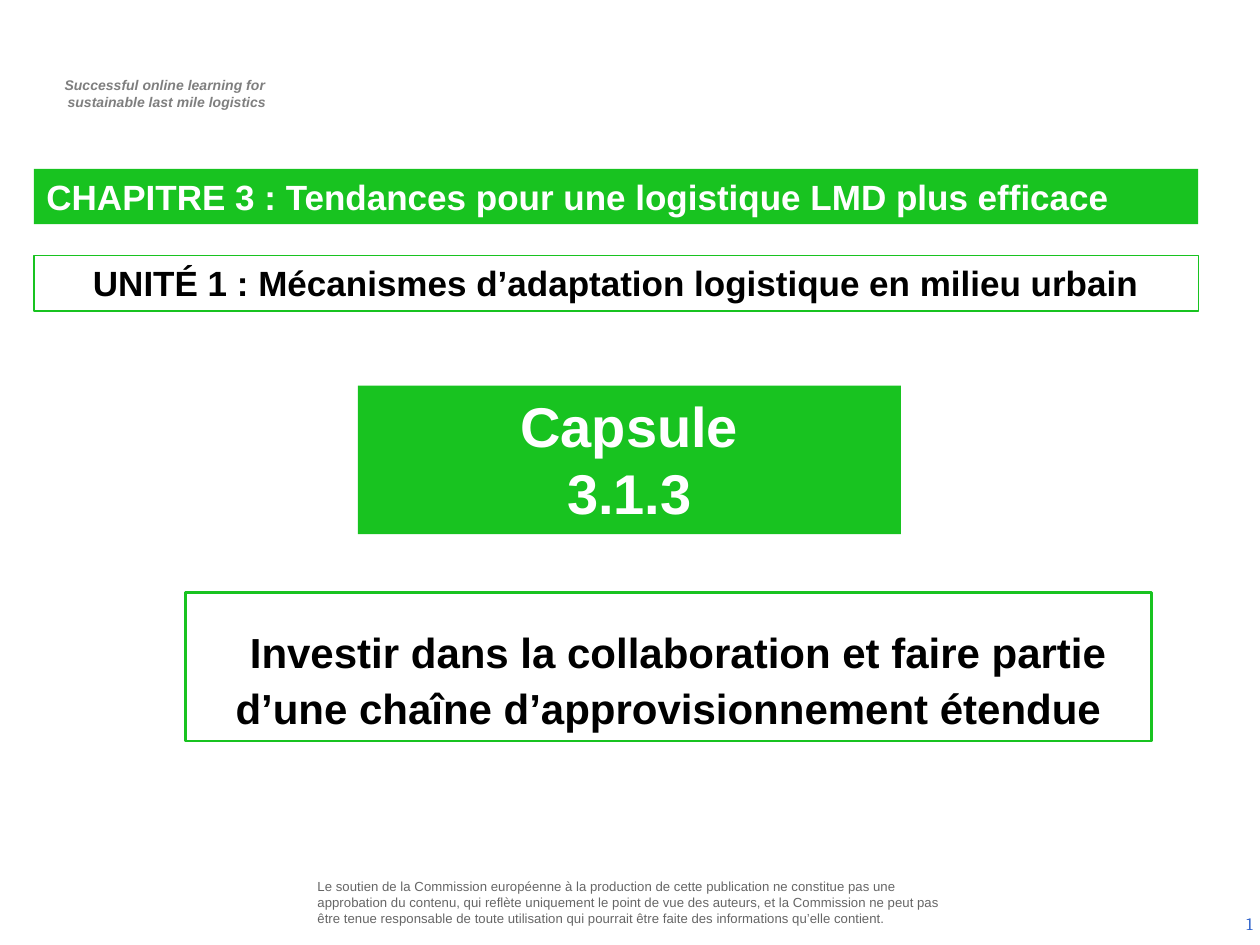
import pptx
import pptx.util
import pptx.dml.color
import pptx.enum.shapes
import pptx.enum.text
import pptx.oxml
import pptx.oxml.ns

Inches = pptx.util.Inches
RGBColor = pptx.dml.color.RGBColor
ALIGN = pptx.enum.text.PP_ALIGN
ANCHOR = pptx.enum.text.MSO_ANCHOR

GREEN = RGBColor(0x18, 0xC3, 0x20)
WHITE = RGBColor(0xFF, 0xFF, 0xFF)
BLACK = RGBColor(0, 0, 0)
HEADER_GRAY = RGBColor(0x7F, 0x7F, 0x7F)
NOTICE_GRAY = RGBColor(0x66, 0x66, 0x66)
NUMBER_BLUE = RGBColor(0x33, 0x66, 0xCC)


def write(shape, lines, size, color, align, bold=False, anchor=ANCHOR.TOP,
          inset=(0.1, 0.05)):
    """Fill a shape with paragraphs that share one format."""
    frame = shape.text_frame
    frame.word_wrap = True
    frame.auto_size = pptx.enum.text.MSO_AUTO_SIZE.NONE
    frame.vertical_anchor = anchor
    frame.margin_left = frame.margin_right = Inches(inset[0])
    frame.margin_top = frame.margin_bottom = Inches(inset[1])
    frame.text = "\n".join(lines)
    for paragraph in frame.paragraphs:
        paragraph.alignment = align
        paragraph.font.name = "Arial"
        paragraph.font.size = pptx.util.Pt(size)
        paragraph.font.bold = bold
        paragraph.font.color.rgb = color
    return frame.paragraphs


presentation = pptx.Presentation()
presentation.slide_width = Inches(10)
presentation.slide_height = Inches(7.5)
slide = presentation.slides.add_slide(presentation.slide_layouts[5])

# Project tagline
tagline = slide.shapes.add_textbox(Inches(0.29), Inches(0.56), Inches(2.03), Inches(0.37))
tagline_lines = ["Successful online learning for ", "sustainable last mile logistics"]
for paragraph in write(tagline, tagline_lines, 8, HEADER_GRAY, ALIGN.CENTER, bold=True):
    paragraph.font.italic = True
    paragraph._p.get_or_add_pPr().set("marL", str(Inches(0.04)))

# Funding notice
notice = slide.shapes.add_textbox(Inches(2.48), Inches(6.91), Inches(5.14), Inches(0.5))
write(notice, [
    "Le soutien de la Commission européenne à la production de cette publication "
    "ne constitue pas une approbation du contenu, qui reflète uniquement le point "
    "de vue des auteurs, et la Commission ne peut pas être tenue responsable de "
    "toute utilisation qui pourrait être faite des informations qu’elle contient."
], 7.5, NOTICE_GRAY, ALIGN.LEFT, anchor=ANCHOR.MIDDLE, inset=(0.04, 0.04))

# Slide number, as a field
number = slide.shapes.add_textbox(Inches(7.71), Inches(7.13), Inches(2.33), Inches(0.4))
paragraph = write(number, ["1"], 10, NUMBER_BLUE, ALIGN.RIGHT, anchor=ANCHOR.MIDDLE)[0]
run = paragraph.runs[0]
run.font.name = "Cambria"
run.font.size = pptx.util.Pt(10)
run.font.color.rgb = NUMBER_BLUE
field = pptx.oxml.parse_xml(
    '<a:fld %s id="{B6F15528-21DE-4FAA-801E-634DDDAF4B2B}" type="slidenum"/>'
    % pptx.oxml.ns.nsdecls("a"))
run._r.addprevious(field)
field.extend(list(run._r))
paragraph._p.remove(run._r)

# Chapter, unit and capsule bars: box, lines, size, alignment, outline width (None = filled)
bars = [
    ((0.27, 1.34, 9.24, 0.44),
     ["CHAPITRE 3 : Tendances pour une logistique LMD plus efficace"], 20, ALIGN.LEFT, None),
    ((0.27, 2.03, 9.24, 0.44),
     ["UNITÉ 1 : Mécanismes d’adaptation logistique en milieu urbain"], 20, ALIGN.CENTER, 0.75),
    ((2.84, 3.06, 4.31, 1.18), ["Capsule", "3.1.3"], 32, ALIGN.CENTER, None),
]
for box, lines, size, align, outline in bars:
    bar = slide.shapes.add_shape(
        pptx.enum.shapes.MSO_SHAPE.RECTANGLE, *[Inches(length) for length in box])
    bar.shadow.inherit = False
    if outline is None:
        bar.fill.solid()
        bar.fill.fore_color.rgb = GREEN
        bar.line.fill.background()
    else:
        bar.fill.background()
        bar.line.color.rgb = GREEN
        bar.line.width = pptx.util.Pt(outline)
    write(bar, lines, size, WHITE if outline is None else BLACK, align, bold=True)

# Capsule title; its larger leading space sets the height of the first line
title = slide.shapes.title
title.left, title.top = Inches(1.47), Inches(4.7)
title.width, title.height = Inches(7.67), Inches(1.18)
title.line.color.rgb = GREEN
title.line.width = pptx.util.Pt(1.5)
paragraph = write(title, [" "], 24, BLACK, ALIGN.CENTER, bold=True)[0]
paragraph.runs[0].font.size = pptx.util.Pt(40)
paragraph.add_run().text = (
    "Investir dans la collaboration et faire partie d’une chaîne d’approvisionnement étendue")

presentation.save("out.pptx")
